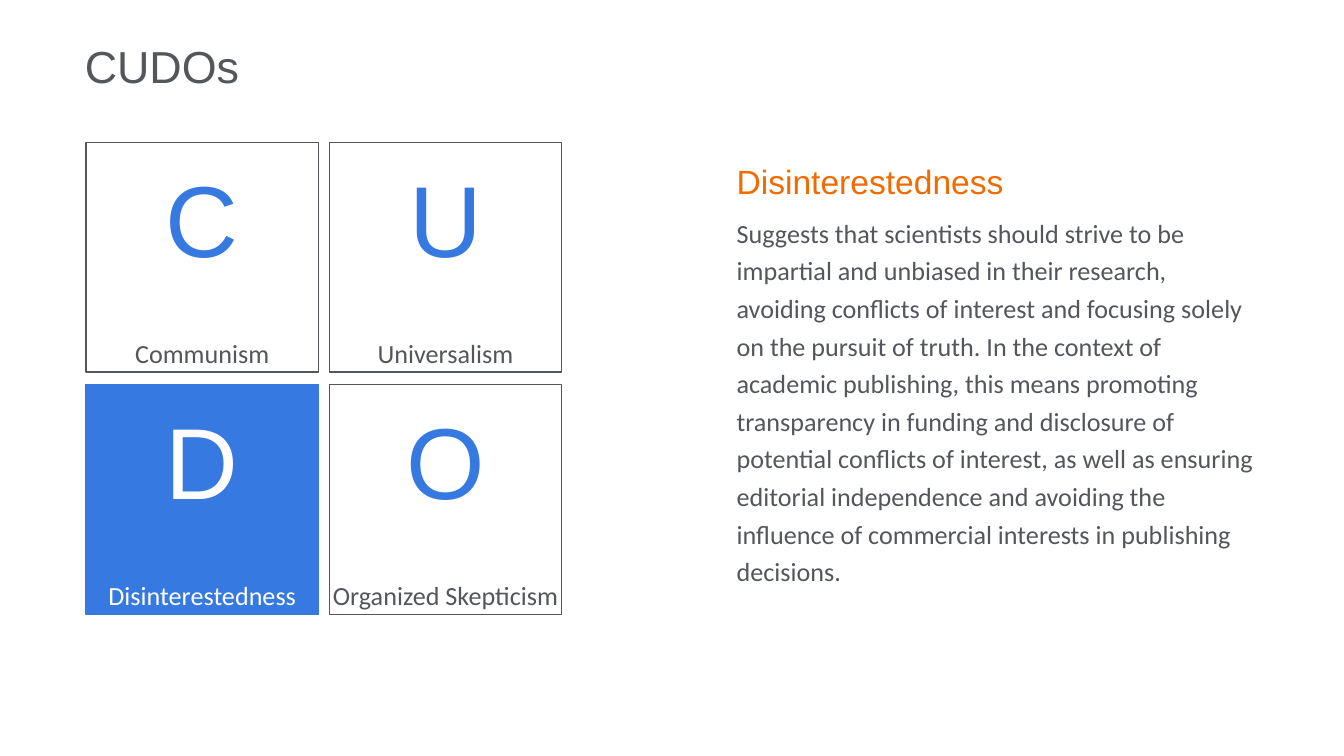
from pptx import Presentation
from pptx.dml.color import RGBColor
from pptx.enum.shapes import MSO_SHAPE
from pptx.enum.text import MSO_ANCHOR, PP_ALIGN
from pptx.util import Pt

BLUE, GREY, ORANGE, WHITE = "3679E0", "53565A", "F26B00", "FFFFFF"
GRID_LEFT, GRID_TOP = 46.1, 76.3
TILE_WIDTH, TILE_HEIGHT = 124.6, 123.1
COLUMN_STEP, ROW_STEP = 130.3, 129.8
TILES = [
    ("C", "Communism"),
    ("U", "Universalism"),
    ("D", "Disinterestedness"),
    ("O", "Organized Skepticism"),
]
ACTIVE_LETTER = "D"
EXPLANATION = (
    "Suggests that scientists should strive to be impartial and unbiased in their "
    "research, avoiding conflicts of interest and focusing solely on the pursuit of "
    "truth. In the context of academic publishing, this means promoting transparency "
    "in funding and disclosure of potential conflicts of interest, as well as ensuring "
    "editorial independence and avoiding the influence of commercial interests in "
    "publishing decisions."
)


def color(value):
    return RGBColor.from_string(value)


def style_paragraph(paragraph, font_name, size, font_color):
    for span in paragraph.runs:
        span.font.name = font_name
        span.font.size = Pt(size)
        span.font.color.rgb = color(font_color)


def add_text_frame(slide, left, top, width, height, wrap=True):
    """Add a text box without margins and return its frame."""
    box = slide.shapes.add_textbox(Pt(left), Pt(top), Pt(width), Pt(height))
    frame = box.text_frame
    frame.margin_left = frame.margin_top = 0
    frame.margin_right = frame.margin_bottom = 0
    frame.word_wrap = wrap
    return frame


def add_title(slide, text):
    frame = add_text_frame(slide, 45.4, 15.1, 615.6, 39.6)
    frame.vertical_anchor = MSO_ANCHOR.MIDDLE
    frame.text = text
    style_paragraph(frame.paragraphs[0], "Arial", 24, GREY)


def add_centered_text(slide, text, left, top, height, font_name, size, font_color):
    frame = add_text_frame(slide, left, top, TILE_WIDTH, height, wrap=False)
    frame.text = text
    paragraph = frame.paragraphs[0]
    paragraph.alignment = PP_ALIGN.CENTER
    style_paragraph(paragraph, font_name, size, font_color)


def add_tile(slide, left, top, letter, label):
    active = letter == ACTIVE_LETTER
    tile = slide.shapes.add_shape(
        MSO_SHAPE.RECTANGLE, Pt(left), Pt(top), Pt(TILE_WIDTH), Pt(TILE_HEIGHT)
    )
    tile.shadow.inherit = False
    tile.fill.solid()
    tile.fill.fore_color.rgb = color(BLUE if active else WHITE)
    tile.line.color.rgb = color(BLUE if active else GREY)
    tile.line.width = Pt(0.75)
    letter_color, label_color = (WHITE, WHITE) if active else (BLUE, GREY)
    add_centered_text(slide, letter, left, top + 7.5, 97.9, "Arial", 54, letter_color)
    add_centered_text(slide, label, left, top + 104.2, 19.4, "Calibri", 14, label_color)


def add_explanation(slide, heading, body):
    frame = add_text_frame(slide, 394.6, 82.1, 280.1, 259.2)
    frame.text = heading
    heading_paragraph = frame.paragraphs[0]
    body_paragraph = frame.add_paragraph()
    body_paragraph.text = body
    body_paragraph.space_before = Pt(5)
    for paragraph in frame.paragraphs:
        paragraph.line_spacing = 1.2
    style_paragraph(heading_paragraph, "Arial", 18, ORANGE)
    style_paragraph(body_paragraph, "Calibri", 14, GREY)


def main():
    deck = Presentation()
    deck.slide_width, deck.slide_height = Pt(720), Pt(405)
    slide = deck.slides.add_slide(deck.slide_layouts[6])
    add_title(slide, "CUDOs")
    for index, (letter, label) in enumerate(TILES):
        row, column = divmod(index, 2)
        left = GRID_LEFT + column * COLUMN_STEP
        top = GRID_TOP + row * ROW_STEP
        add_tile(slide, left, top, letter, label)
    add_explanation(slide, "Disinterestedness", EXPLANATION)
    deck.save("out.pptx")


if __name__ == "__main__":
    main()
